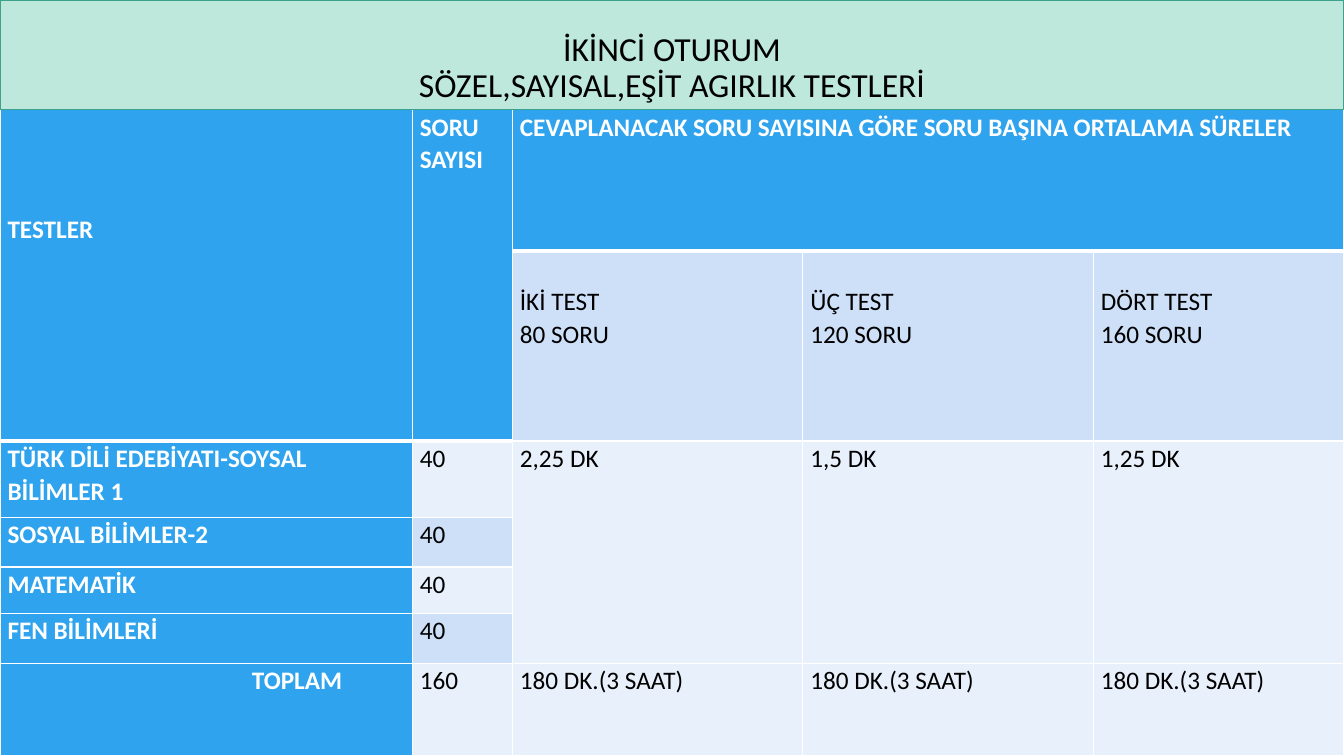
from lxml.etree import SubElement as Sub
from pptx import Presentation
from pptx.dml.color import RGBColor as Rgb
from pptx.enum.shapes import MSO_SHAPE as Shape
from pptx.enum.text import MSO_ANCHOR as Anchor, PP_ALIGN as Align
from pptx.oxml.ns import qn
from pptx.util import Pt

COLORS = {
    "white": "FFFFFF", "grey": "B9B9B9", "black": "000000",
    "mint": "BDE8DB", "green": "3CA28B",
    "blue": "2FA3EE", "mid": "CDE0F8", "pale": "E8F0FC",
}
WIDTH, HEIGHT, TOP = 960, 540, 78.5
COLS = [294.5, 71.5, 207.5, 207.5, 179]
ROWS = [101, 135.5, 54.5, 35.5, 33.5, 35.5, 66]
MERGES = [(0, 0, 1, 0), (0, 1, 1, 1), (0, 2, 0, 4)] + [(2, c, 5, c) for c in (2, 3, 4)]
TOTAL = "180 DK.(3 SAAT)"
TEXTS = [
    ["TESTLER", "SORU SAYISI",
     "CEVAPLANACAK SORU SAYISINA GÖRE SORU BAŞINA ORTALAMA SÜRELER", "", ""],
    ["", "", "İKİ TEST\n80 SORU", "ÜÇ TEST\n120 SORU", "DÖRT TEST\n160 SORU"],
    ["TÜRK DİLİ EDEBİYATI-SOYSAL BİLİMLER 1", "40", "2,25 DK", "1,5 DK", "1,25 DK"],
    ["SOSYAL BİLİMLER-2", "40", "", "", ""],
    ["MATEMATİK", "40", "", "", ""],
    ["FEN BİLİMLERİ", "40", "", "", ""],
    ["TOPLAM", "160", TOTAL, TOTAL, TOTAL],
]


def color(name):
    return Rgb.from_string(COLORS[name])


def write(frame, text, size=18, ink="black", bold=False, align=Align.LEFT, gap=1.07):
    frame.word_wrap = True
    frame.text = text
    for par in frame.paragraphs:
        par.alignment = align
        par.line_spacing = gap
        for run in par.runs:
            font = run.font
            font.name, font.size, font.bold = "Calibri", Pt(size), bold
            font.color.rgb = color(ink)


def edge(cell, side, width):
    line = Sub(cell._tc.get_or_add_tcPr(), qn(f"a:ln{side}"), w=str(Pt(width)))
    fill = Sub(line, qn("a:solidFill"))
    Sub(fill, qn("a:srgbClr"), val=COLORS["white"])


def thick(row, col):
    """Tell whether the cell has a heavy line below it."""
    return row == 0 or (row == 1 and col < 2)


def style(cell, row, col):
    """Set the fill, borders and insets that follow from the cell's place."""
    for side in "LR":
        edge(cell, side, 1)
    edge(cell, "T", 3 if row and thick(row - 1, col) else 1)
    edge(cell, "B", 3 if thick(row, col) else 1)
    head = row == 0 or col == 0 or (row == 1 and col == 1)
    band = "mid" if row % 2 else "pale"
    cell.fill.solid()
    cell.fill.fore_color.rgb = color("blue" if head else band)
    cell.margin_left = Pt(180 if (row, col) == (6, 0) else 5.4)
    cell.margin_right = Pt(5.4)
    cell.margin_bottom = 0
    cell.margin_top = Pt(73 if (row, col) == (0, 0) else 23.5 if row == 1 else 0)
    return head


def banner(slide, left, top, width, height):
    box = slide.shapes.add_shape(Shape.RECTANGLE, Pt(left), Pt(top), Pt(width), Pt(height))
    box.shadow.inherit = False
    box.fill.solid()
    box.fill.fore_color.rgb = color("mint")
    box.line.color.rgb = color("green")
    box.line.width = Pt(0.75)
    frame = box.text_frame
    frame.vertical_anchor = Anchor.BOTTOM
    write(frame, "İKİNCİ OTURUM\vSÖZEL,SAYISAL,EŞİT AGIRLIK TESTLERİ",
          size=24, align=Align.CENTER, gap=0.9)


def grid(slide, left, top, width, height):
    table = slide.shapes.add_table(len(ROWS), len(COLS), Pt(left), Pt(top),
                                   Pt(width), Pt(height)).table
    for col, size in zip(table.columns, COLS):
        col.width = Pt(width * size / sum(COLS))
    for row, size in zip(table.rows, ROWS):
        row.height = Pt(height * size / sum(ROWS))
    for r1, c1, r2, c2 in MERGES:
        table.cell(r1, c1).merge(table.cell(r2, c2))
    for r, texts in enumerate(TEXTS):
        for c, text in enumerate(texts):
            cell = table.cell(r, c)
            head = style(cell, r, c)
            if text:
                write(cell.text_frame, text, ink="white" if head else "black", bold=head)


def main():
    deck = Presentation()
    deck.slide_width, deck.slide_height = Pt(WIDTH), Pt(HEIGHT)
    slide = deck.slides.add_slide(deck.slide_layouts[6])
    back = slide.background.fill
    back.gradient()
    back.gradient_angle = 270
    for stop, name in zip(back.gradient_stops, ("white", "grey")):
        stop.color.rgb = color(name)
    grid(slide, 0, TOP, WIDTH, HEIGHT - TOP)
    banner(slide, 0, 0, WIDTH, TOP)
    deck.save("out.pptx")


if __name__ == "__main__":
    main()
